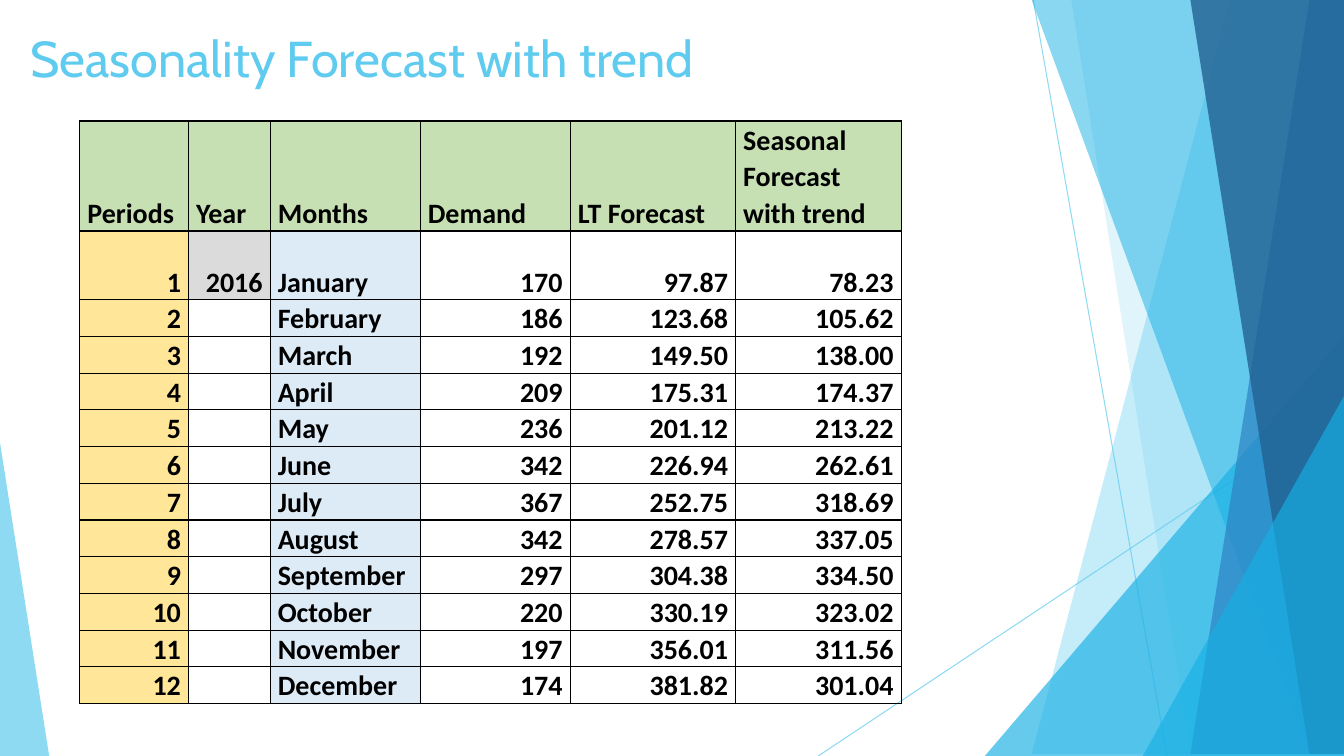
import pptx
import pptx.dml.color
import pptx.enum.shapes
import pptx.enum.text
import pptx.oxml
import pptx.oxml.ns
import pptx.util
from pptx.util import Cm

# Content
TITLE = "Seasonality Forecast with trend"
HEADERS = ["Periods", "Year", "Months", "Demand", "LT Forecast", "Seasonal Forecast with trend"]
YEAR = "2016"
FORECAST = [
    ("January", "170", "97.87", "78.23"),
    ("February", "186", "123.68", "105.62"),
    ("March", "192", "149.50", "138.00"),
    ("April", "209", "175.31", "174.37"),
    ("May", "236", "201.12", "213.22"),
    ("June", "342", "226.94", "262.61"),
    ("July", "367", "252.75", "318.69"),
    ("August", "342", "278.57", "337.05"),
    ("September", "297", "304.38", "334.50"),
    ("October", "220", "330.19", "323.02"),
    ("November", "197", "356.01", "311.56"),
    ("December", "174", "381.82", "301.04"),
]

THEME = {
    "title_font": "Cabin", "title_size": 36,
    "table_font": "Calibri", "table_size": 20, "line_spacing": 1.07,
    "text": "000000", "border": "000000",
    "header": "C6E0B4", "period": "FFE699", "year": "DBDBDB", "month": "DDEBF7",
    "sky": "5FCBEF", "cyan": "17B0E4", "blue": "2E83C3", "navy": "226292",
}

# Geometry in centimetres
WIDTH, HEIGHT = 33.87, 19.05
COLUMN_WIDTHS = [2.74, 2.06, 3.78, 3.78, 4.17, 4.17]
ROW_HEIGHTS = [2.64, 1.73] + [0.89] * 11
YEAR_COLUMN, MONTH_COLUMN = 1, 2

RAYS = [((26.04, 0), (29.41, HEIGHT)), ((WIDTH, 10.24), (20.62, HEIGHT))]
# band: top x, bottom x; triangle: left, top, width, apex; then colour, opacity
BACKDROP = [
    ("band", (31.19, 25.5), "sky", 36),
    ("band", (26.67, 30.05), "sky", 20),
    ("triangle", (24.82, 8.46, 9.05, 1), "cyan", 66),
    ("band", (25.93, 32.79), "cyan", 50),
    ("band", (33.1, 30.28), "blue", 70),
    ("band", (30.38, 33.48), "navy", 80),
    ("triangle", (28.8, 9.98, 5.07, 1), "cyan", 66),
    ("triangle", (0, 11.15, 1.24, 0), "sky", 70),
]


def color(name):
    return pptx.dml.color.RGBColor.from_string(THEME[name])


def set_opacity(element, percent):
    for color_element in element.iter(pptx.oxml.ns.qn("a:srgbClr")):
        alpha = color_element.makeelement(pptx.oxml.ns.qn("a:alpha"), {"val": str(percent * 1000)})
        color_element.append(alpha)


def add_ray(slide, start, end):
    points = [Cm(value) for value in start + end]
    ray = slide.shapes.add_connector(pptx.enum.shapes.MSO_CONNECTOR.STRAIGHT, *points)
    ray.line.color.rgb = color("sky")
    ray.line.width = pptx.util.Pt(0.75)
    properties = ray.element.spPr
    set_opacity(properties, 70)
    properties.append(properties.makeelement(pptx.oxml.ns.qn("a:effectLst"), {}))


def add_facet(slide, kind, geometry, fill, opacity):
    if kind == "band":
        top_x, bottom_x = geometry
        builder = slide.shapes.build_freeform(top_x, 0, scale=Cm(1))
        builder.add_line_segments([(WIDTH, 0), (WIDTH, HEIGHT), (bottom_x, HEIGHT)])
        shape = builder.convert_to_shape()
    else:
        left, top, width, apex = geometry
        shape = slide.shapes.add_shape(
            pptx.enum.shapes.MSO_SHAPE.ISOSCELES_TRIANGLE,
            Cm(left), Cm(top), Cm(width), Cm(HEIGHT - top))
        shape.adjustments[0] = apex
    shape.shadow.inherit = False
    shape.line.fill.background()
    shape.fill.solid()
    shape.fill.fore_color.rgb = color(fill)
    set_opacity(shape.element.spPr, opacity)


def write(paragraph, text, font, size, text_color, bold=False):
    run = paragraph.add_run()
    run.text = text
    run.font.name = THEME[font]
    run.font.size = pptx.util.Pt(THEME[size])
    run.font.color.rgb = color(text_color)
    run.font.bold = bold


def add_borders(cell):
    properties = cell._tc.get_or_add_tcPr()
    for index, side in enumerate(("lnL", "lnR", "lnT", "lnB")):
        border = pptx.oxml.parse_xml(
            f'<a:{side} {pptx.oxml.ns.nsdecls("a")} w="12700"><a:solidFill>'
            f'<a:srgbClr val="{THEME["border"]}"/></a:solidFill></a:{side}>')
        properties.insert(index, border)


def cell_fill(row, column, text):
    if row == 0:
        return "header"
    if column == YEAR_COLUMN:
        return "year" if text else None
    return {0: "period", MONTH_COLUMN: "month"}.get(column)


def format_cell(cell, row, column, text):
    cell.margin_left = cell.margin_right = Cm(0.19)
    cell.margin_top = cell.margin_bottom = 0
    cell.vertical_anchor = pptx.enum.text.MSO_ANCHOR.BOTTOM
    fill = cell_fill(row, column, text)
    if fill:
        cell.fill.solid()
        cell.fill.fore_color.rgb = color(fill)
    else:
        cell.fill.background()
    add_borders(cell)
    if text:
        paragraph = cell.text_frame.paragraphs[0]
        paragraph.line_spacing = THEME["line_spacing"]
        if row > 0 and column != MONTH_COLUMN:
            paragraph.alignment = pptx.enum.text.PP_ALIGN.RIGHT
        write(paragraph, text, "table_font", "table_size", "text", bold=True)


def add_title(slide):
    title = slide.shapes.title
    title.left, title.top, title.width, title.height = Cm(0.51), Cm(0.51), Cm(23.88), Cm(1.88)
    title.text_frame.vertical_anchor = pptx.enum.text.MSO_ANCHOR.MIDDLE
    paragraph = title.text_frame.paragraphs[0]
    paragraph.alignment = pptx.enum.text.PP_ALIGN.LEFT
    write(paragraph, TITLE, "title_font", "title_size", "sky")


def add_forecast_table(slide):
    rows = [HEADERS]
    for period, values in enumerate(FORECAST, start=1):
        rows.append([str(period), YEAR if period == 1 else "", *values])
    table = slide.shapes.add_table(
        len(rows), len(HEADERS), Cm(2.01), Cm(3.05),
        Cm(sum(COLUMN_WIDTHS)), Cm(sum(ROW_HEIGHTS))).table
    table.first_row = table.horz_banding = False
    for column, width in zip(table.columns, COLUMN_WIDTHS):
        column.width = Cm(width)
    for row, height in zip(table.rows, ROW_HEIGHTS):
        row.height = Cm(height)
    for row, texts in enumerate(rows):
        for column, text in enumerate(texts):
            format_cell(table.cell(row, column), row, column, text)


def main():
    presentation = pptx.Presentation()
    presentation.slide_width, presentation.slide_height = Cm(WIDTH), Cm(HEIGHT)
    slide = presentation.slides.add_slide(presentation.slide_layouts[5])

    # Backdrop
    for start, end in RAYS:
        add_ray(slide, start, end)
    for facet in BACKDROP:
        add_facet(slide, *facet)

    # Title and table
    add_title(slide)
    add_forecast_table(slide)
    presentation.save("out.pptx")


if __name__ == "__main__":
    main()
